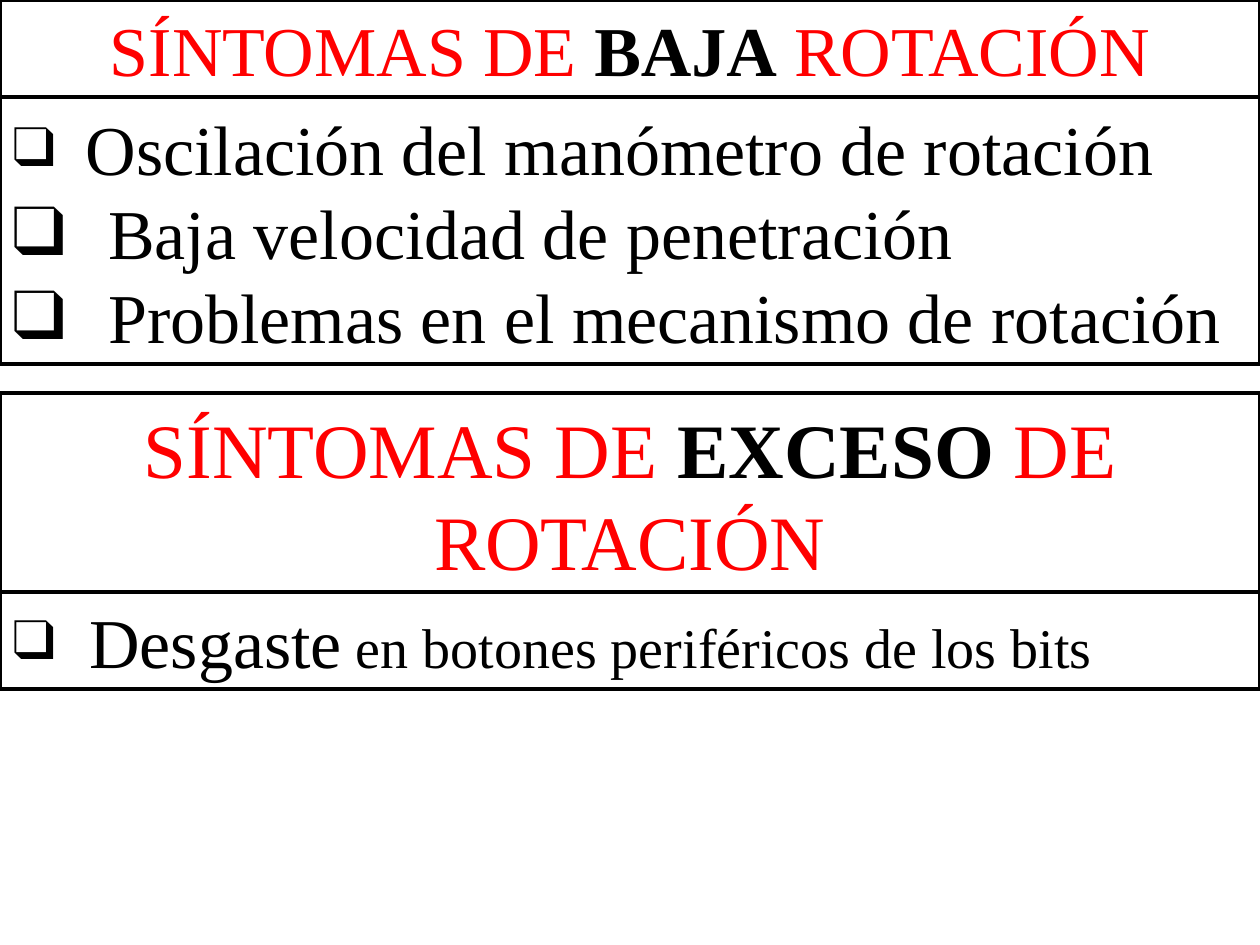
"""Build a slide listing the symptoms of low and excessive rotation."""
from lxml import etree
from pptx import Presentation, util as u
from pptx.dml.color import RGBColor
from pptx.enum import text
from pptx.oxml.ns import qn

RED = RGBColor(0xFF, 0, 0)
BLACK = RGBColor(0, 0, 0)
WHITE = RGBColor(0xFF, 0xFF, 0xFF)
FONT = "Times New Roman"


def add_run(p, words, size=40, color=BLACK, bold=False):
    """Append a formatted run to a paragraph."""
    r = p.add_run()
    r.text = words
    r.font.name = FONT
    r.font.size = u.Pt(size)
    r.font.bold = bold
    r.font.color.rgb = color


def add_bullet(p, indent, percent):
    """Give a paragraph a hanging square bullet."""
    pPr = p._p.get_or_add_pPr()
    pPr.set("marL", str(u.Inches(indent)))
    pPr.set("indent", str(-u.Inches(indent)))
    color = etree.SubElement(pPr, qn("a:buClr"))
    etree.SubElement(color, qn("a:srgbClr"), val=str(BLACK))
    etree.SubElement(pPr, qn("a:buSzPct"), val=str(percent * 1000))
    etree.SubElement(pPr, qn("a:buFont"), typeface=FONT)
    etree.SubElement(pPr, qn("a:buChar"), char="❑")


class SymptomSlide:
    """Hold the slide and its framed-box style."""

    def __init__(self, prs):
        self.s = prs.slides.add_slide(prs.slide_layouts[4])
        self.holders = {h.placeholder_format.idx: h for h in self.s.placeholders}

    def box(self, idx, top, height):
        """Frame a placeholder across the slide and return its text frame."""
        sp = self.holders.pop(idx)
        sp.left, sp.top = 0, u.Inches(top)
        sp.width, sp.height = u.Inches(10), u.Inches(height)
        sp.fill.solid()
        sp.fill.fore_color.rgb = WHITE
        sp.line.color.rgb = BLACK
        sp.line.width = u.Pt(2)
        tf = sp.text_frame
        tf.word_wrap = True
        tf.auto_size = text.MSO_AUTO_SIZE.NONE
        tf.vertical_anchor = text.MSO_ANCHOR.BOTTOM
        return tf

    def paragraph(self, p, spacing):
        """Set the line spacing of a paragraph."""
        p.line_spacing = u.Pt(spacing)
        p.space_before = u.Pt(0)

    def heading(self, idx, top, height, parts, size, spacing):
        """Write a red heading with its middle part in bold black."""
        p = self.box(idx, top, height).paragraphs[0]
        self.paragraph(p, spacing)
        p.alignment = text.PP_ALIGN.CENTER
        before, key, after = parts
        add_run(p, before, size, RED)
        add_run(p, key, size, bold=True)
        add_run(p, after, size, RED)

    def bullets(self, idx, top, height, items):
        """Write bulleted items of (indent, bullet percent, runs)."""
        tf = self.box(idx, top, height)
        for i, (indent, percent, runs) in enumerate(items):
            p = tf.add_paragraph() if i else tf.paragraphs[0]
            self.paragraph(p, 48)
            add_bullet(p, indent, percent)
            for words, size in runs:
                add_run(p, words, size)

    def clean(self):
        """Remove the placeholders left empty."""
        for sp in self.holders.values():
            sp.element.getparent().remove(sp.element)


def main():
    """Create and save the presentation."""
    prs = Presentation()
    prs.slide_width, prs.slide_height = u.Inches(10), u.Inches(7.5)
    slide = SymptomSlide(prs)
    slide.heading(0, 0, 0.77, ("SÍNTOMAS DE ", "BAJA", " ROTACIÓN"), 40, 48)
    slide.bullets(2, 0.77, 2.12, [
        (0.58, 80, [("Oscilación del manómetro de rotación", 40)]),
        (0.76, 100, [("Baja velocidad de penetración", 40)]),
        (0.76, 100, [("Problemas en el mecanismo de rotación", 40)]),
    ])
    slide.heading(3, 3.12, 1.58, ("SÍNTOMAS DE ", "EXCESO", " DE ROTACIÓN"), 44, 52.5)
    slide.bullets(4, 4.7, 0.77, [
        (0.61, 80, [("Desgaste", 40), (" en botones periféricos de los bits", 32)]),
    ])
    slide.clean()
    prs.save("out.pptx")


if __name__ == "__main__":
    main()
